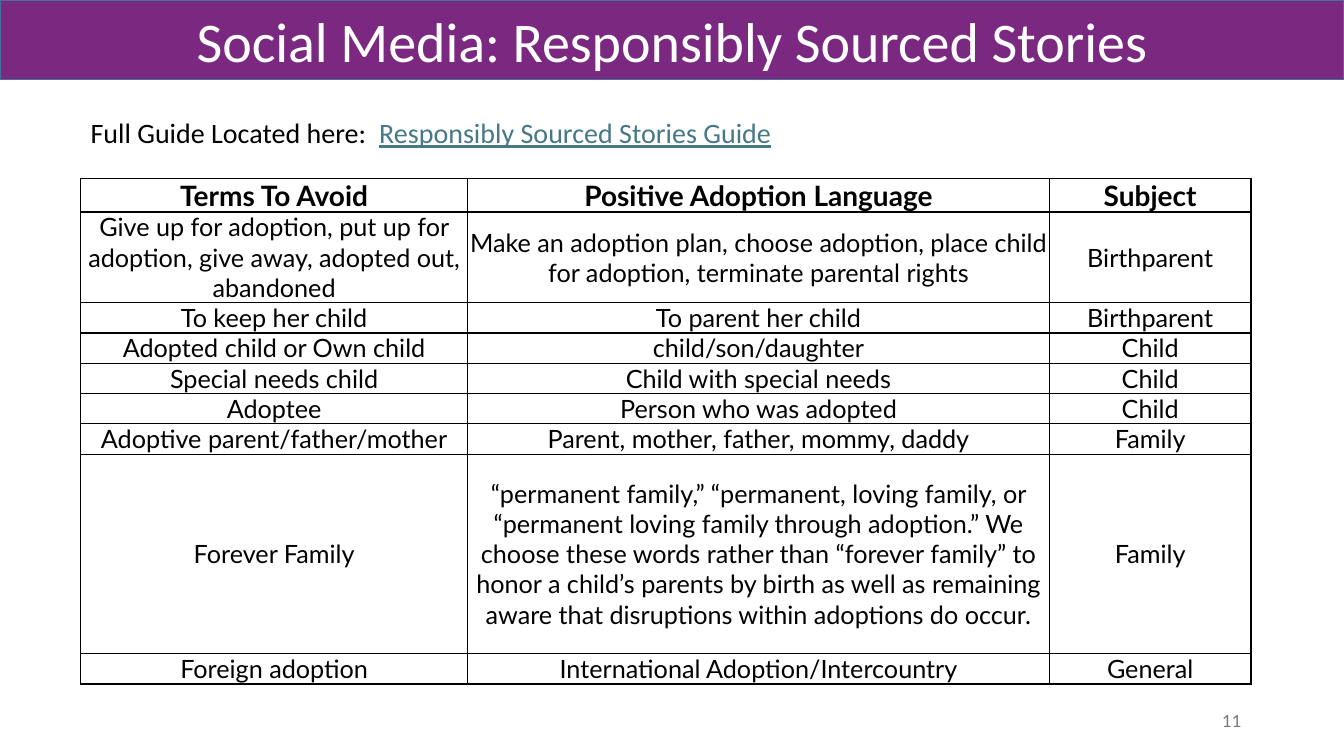
from dataclasses import dataclass

from lxml.etree import SubElement
from pptx import Presentation
from pptx.dml.color import RGBColor as RGB
from pptx.enum.text import MSO_ANCHOR as Anchor, MSO_AUTO_SIZE as AutoSize, PP_ALIGN as Align
from pptx.oxml.ns import qn
from pptx.util import Pt


@dataclass(frozen=True)
class Theme:
    heading_font: str = "Calibri"
    table_font: str = "Lato"
    text: RGB = RGB(0x00, 0x00, 0x00)
    banner: RGB = RGB(0x7B, 0x29, 0x80)
    banner_line: RGB = RGB(0x41, 0x71, 0x9C)
    banner_text: RGB = RGB(0xFF, 0xFF, 0xFF)
    link: RGB = RGB(0x46, 0x78, 0x86)
    muted: RGB = RGB(0x79, 0x79, 0x79)
    title_size: int = 40
    lead_size: int = 20
    header_size: int = 20
    cell_size: int = 18
    number_size: int = 12


class Deck:
    def __init__(self, theme, width, height):
        self.theme = theme
        self.prs = Presentation()
        self.prs.slide_width, self.prs.slide_height = Pt(width), Pt(height)
        self.slide = self.prs.slides.add_slide(self.prs.slide_layouts[5])

    def style(self, p, name, size, color, align=Align.LEFT, bold=False):
        p.alignment = align
        p.font.name, p.font.size, p.font.bold = name, Pt(size), bold
        p.font.color.rgb = color

    def title(self, text, left, top, width, height):
        t, sp = self.theme, self.slide.shapes.title
        sp.left, sp.top, sp.width, sp.height = map(Pt, (left, top, width, height))
        sp.fill.solid()
        sp.fill.fore_color.rgb = t.banner
        sp.line.color.rgb = t.banner_line
        sp.line.width = Pt(1)
        tf = sp.text_frame
        tf.text = text
        tf.auto_size = AutoSize.NONE
        tf.vertical_anchor = Anchor.MIDDLE
        self.style(tf.paragraphs[0], t.heading_font, t.title_size, t.banner_text, Align.CENTER)

    def box(self, left, top, width, height, anchor=Anchor.TOP):
        sp = self.slide.shapes.add_textbox(*map(Pt, (left, top, width, height)))
        tf = sp.text_frame
        tf.word_wrap = True
        tf.vertical_anchor = anchor
        return tf

    def lead(self, text, link, *place):
        t, tf = self.theme, self.box(*place)
        tf.auto_size = AutoSize.SHAPE_TO_FIT_TEXT
        p = tf.paragraphs[0]
        self.style(p, t.heading_font, t.lead_size, t.text)
        p.add_run().text = text
        r = p.add_run()
        r.text = link
        r.font.underline = True
        r.font.color.rgb = t.link

    def page_number(self, text, *place):
        t, tf = self.theme, self.box(*place, anchor=Anchor.MIDDLE)
        tf.text = text
        self.style(tf.paragraphs[0], t.table_font, t.number_size, t.muted, Align.RIGHT)

    def borders(self, cell):
        props = cell._tc.get_or_add_tcPr()
        for side in ("lnL", "lnR", "lnT", "lnB"):
            ln = SubElement(props, qn(f"a:{side}"), w=str(Pt(1)))
            fill = SubElement(ln, qn("a:solidFill"))
            SubElement(fill, qn("a:srgbClr"), val=str(self.theme.text))

    def cell(self, cell, text, header):
        t = self.theme
        self.borders(cell)
        cell.fill.background()
        cell.margin_left = cell.margin_right = cell.margin_top = cell.margin_bottom = 0
        cell.vertical_anchor = Anchor.MIDDLE
        cell.text = text
        size = t.header_size if header else t.cell_size
        self.style(cell.text_frame.paragraphs[0], t.table_font, size, t.text, Align.CENTER, header)

    def table(self, rows, left, top, widths, heights):
        frame = self.slide.shapes.add_table(
            len(rows), len(widths), Pt(left), Pt(top), Pt(sum(widths)), Pt(sum(heights)))
        tbl = frame.table
        tbl.first_row = tbl.horz_banding = False
        for col, width in zip(tbl.columns, widths):
            col.width = Pt(width)
        for i, (row, height, texts) in enumerate(zip(tbl.rows, heights, rows)):
            row.height = Pt(height)
            for cell, text in zip(row.cells, texts):
                self.cell(cell, text, header=i == 0)


TERMS = [
    ("Terms To Avoid", "Positive Adoption Language", "Subject"),
    ("Give up for adoption, put up for adoption, give away, adopted out, abandoned",
     "Make an adoption plan, choose adoption, place child for adoption, "
     "terminate parental rights", "Birthparent"),
    ("To keep her child", "To parent her child", "Birthparent"),
    ("Adopted child or Own child", "child/son/daughter", "Child"),
    ("Special needs child", "Child with special needs", "Child"),
    ("Adoptee", "Person who was adopted", "Child"),
    ("Adoptive parent/father/mother", "Parent, mother, father, mommy, daddy", "Family"),
    ("Forever Family",
     "“permanent family,” “permanent, loving family, or “permanent loving family through "
     "adoption.” We choose these words rather than “forever family” to honor a child’s "
     "parents by birth as well as remaining aware that disruptions within adoptions do occur.",
     "Family"),
    ("Foreign adoption", "International Adoption/Intercountry", "General"),
]


def main():
    deck = Deck(Theme(), 960, 540)
    deck.title("Social Media: Responsibly Sourced Stories", 0, 0, 960, 57)
    deck.lead("Full Guide Located here:  ", "Responsibly Sourced Stories Guide", 57.6, 79.2, 896.4, 31.7)
    deck.table(TERMS, 57.6, 127.4, [276.5, 415.5, 144], [14.4, 43.2] + [14.4] * 5 + [142.6, 21.6])
    deck.page_number("11", 678, 500.4, 216, 28.8)
    deck.prs.save("out.pptx")


if __name__ == "__main__":
    main()
